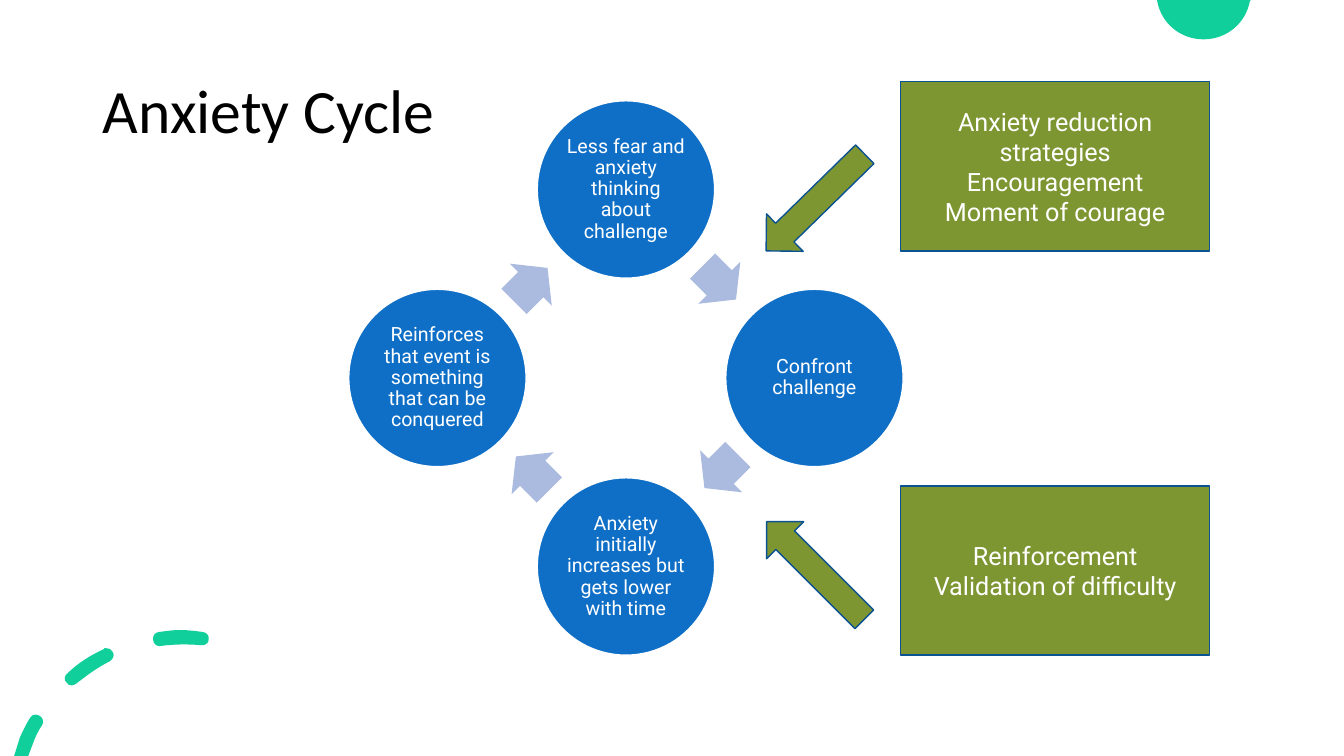
from math import cos, pi, sin

from lxml.etree import SubElement
from pptx import Presentation
from pptx.dml.color import RGBColor
from pptx.enum.shapes import MSO_SHAPE
from pptx.enum.text import MSO_ANCHOR, PP_ALIGN
from pptx.oxml.ns import qn
from pptx.util import Inches, Pt

CELL = Inches(0.1)
COLS, ROWS = 133.33, 75
MINT = RGBColor(0x10, 0xCF, 0x9B)
BLUE = RGBColor(0x0F, 0x6F, 0xC6)
PALE = RGBColor(0xAB, 0xBB, 0xDF)
OLIVE = RGBColor(0x7E, 0x96, 0x32)
NAVY = RGBColor(0x0B, 0x52, 0x92)
WHITE = RGBColor(0xFF, 0xFF, 0xFF)
BLACK = RGBColor(0, 0, 0)

HUB = (62.1, 37.5)
REACH = 18.7
DISC = 17.6
STEPS = [
    "Less fear and anxiety thinking about challenge",
    "Confront challenge",
    "Anxiety initially increases but gets lower with time",
    "Reinforces that event is something that can be conquered",
]
BOXES = [
    (8.1, ["Anxiety reduction strategies", "Encouragement", "Moment of courage"]),
    (48.2, ["Reinforcement", "Validation of difficulty"]),
]
HINTS = [(17.5, 315.6), (54, 45)]
CAP = [[(114.8, 0), (124.1, 0), (124, 0.1),
        (123.6, 2.3, 121.7, 3.9, 119.4, 3.9),
        (117.1, 3.9, 115.2, 2.3, 114.8, 0.1)]]
DASHES = [
    [(3.6, 70.9), (3.4, 70.8, 3.1, 71, 3, 71.2),
     (2.6, 71.8, 2.3, 72.5, 2, 73.1), (1.4, 75), (2.8, 75), (3.3, 73.7),
     (3.5, 73.1, 3.8, 72.5, 4.2, 71.9), (4.4, 71.6, 4.2, 71.1, 3.9, 71),
     (3.8, 70.9, 3.7, 70.9, 3.6, 70.9)],
    [(10.5, 64.3), (10.4, 64.3, 10.3, 64.3, 10.3, 64.4),
     (9, 65, 7.7, 65.8, 6.7, 66.8), (6.4, 67, 6.3, 67.5, 6.6, 67.7),
     (6.7, 67.9, 6.9, 68, 7.1, 68), (7.3, 68, 7.4, 67.9, 7.6, 67.8),
     (8.6, 67, 9.7, 66.2, 10.9, 65.6), (11.2, 65.4, 11.4, 65, 11.2, 64.7),
     (11.1, 64.4, 10.8, 64.3, 10.5, 64.3)],
    [(17.9, 62.5), (17.2, 62.5, 16.5, 62.6, 15.8, 62.7),
     (15.4, 62.7, 15.1, 63.1, 15.2, 63.5), (15.2, 63.8, 15.5, 64.1, 15.8, 64.1),
     (17.3, 63.9, 18.6, 63.9, 19.9, 64), (20.3, 64.1, 20.7, 63.8, 20.7, 63.5),
     (20.8, 63.1, 20.5, 62.7, 20.1, 62.7), (19.4, 62.6, 18.6, 62.5, 17.9, 62.5)],
]


def grid(*cells):
    """Turn grid cells into slide lengths."""
    return [round(cell * CELL) for cell in cells]


def paint(shape, fill, line=None):
    """Set flat fill and outline."""
    shape.shadow.inherit = False
    shape.fill.solid()
    shape.fill.fore_color.rgb = fill
    if line is None:
        shape.line.fill.background()
    else:
        shape.line.color.rgb = line
        shape.line.width = Pt(1)


def bend(shape, legs):
    """Merge the three lines of each six-number leg into a cubic curve."""
    lines = iter(list(shape.element.iter(qn("a:lnTo"))))
    for leg in legs:
        first = next(lines)
        if len(leg) == 6:
            route = first.getparent()
            curve = SubElement(route, qn("a:cubicBezTo"))
            first.addprevious(curve)
            for line in (first, next(lines), next(lines)):
                curve.append(line[0])
                route.remove(line)


def blob(slide, loops):
    """Draw a mint outline made of closed loops."""
    pen = slide.shapes.build_freeform(*grid(*loops[0][0]))
    for i, (start, *legs) in enumerate(loops):
        if i:
            pen.move_to(*grid(*start))
        pen.add_line_segments([grid(*leg[j:j + 2]) for leg in legs
                               for j in range(0, len(leg), 2)])
    shape = pen.convert_to_shape()
    bend(shape, [leg for loop in loops for leg in loop[1:]])
    paint(shape, MINT)


def write(shape, lines, size, font, color, align, space=None):
    """Fill a shape with paragraphs."""
    frame = shape.text_frame
    frame.word_wrap = True
    frame.vertical_anchor = MSO_ANCHOR.MIDDLE
    frame.text = "\n".join(lines)
    for para in frame.paragraphs:
        para.alignment = align
        para.line_spacing = space
        para.font.size = Pt(size)
        para.font.name = font
        para.font.color.rgb = color


def title(slide, text):
    """Add the slide title."""
    box = slide.shapes.add_textbox(*grid(9.2, 4, 115, 14.5))
    write(box, [text], 44, "Calibri", BLACK, PP_ALIGN.LEFT, 0.9)


def disc(group, x, y, text):
    """Add one stage of the cycle, centred on a point."""
    shape = group.shapes.add_shape(
        MSO_SHAPE.OVAL, *grid(x - DISC / 2, y - DISC / 2, DISC, DISC))
    paint(shape, BLUE, WHITE)
    frame = shape.text_frame
    frame.margin_left = frame.margin_right = Inches(0.02)
    frame.margin_top = frame.margin_bottom = Inches(0.02)
    write(shape, [text], 14, "Roboto", WHITE, PP_ALIGN.CENTER, 0.9)


def arrow(owner, kind, x, y, wide, high, turn, fill, line=None):
    """Add a turned block arrow, centred on a point."""
    shape = owner.shapes.add_shape(
        kind, *grid(x - wide / 2, y - high / 2, wide, high))
    shape.rotation = turn
    paint(shape, fill, line)
    return shape


def cycle(slide):
    """Add the ring of stages and the arrows between them."""
    group = slide.shapes.add_group_shape()
    count = len(STEPS)
    turns = [2 * pi * i / count - pi / 2 for i in range(count)]
    spots = [(HUB[0] + REACH * cos(a), HUB[1] + REACH * sin(a)) for a in turns]
    for i, (text, spot) in enumerate(zip(STEPS, spots)):
        disc(group, *spot, text)
        after = spots[(i + 1) % count]
        x, y = ((a + b) / 2 + (a - b) / 200 for a, b in zip(spot, after))
        link = arrow(group, MSO_SHAPE.RIGHT_ARROW, x, y, 4.7, 5.9,
                     45 + 360 / count * i, PALE)
        link.adjustments[0] = 0.6
        link.adjustments[1] = 0.5


def panel(slide, top, lines):
    """Add an olive box of advice."""
    shape = slide.shapes.add_shape(
        MSO_SHAPE.RECTANGLE, *grid(89.36, top, 30.64, 16.8))
    paint(shape, OLIVE, NAVY)
    write(shape, lines, 18, "Roboto", WHITE, PP_ALIGN.CENTER)


def main():
    """Build and save the slide."""
    deck = Presentation()
    deck.slide_width, deck.slide_height = grid(COLS, ROWS)
    slide = deck.slides.add_slide(deck.slide_layouts[6])
    blob(slide, CAP)
    blob(slide, DASHES)
    title(slide, "Anxiety Cycle")
    cycle(slide)
    for (top, lines), (row, turn) in zip(BOXES, HINTS):
        panel(slide, top, lines)
        arrow(slide, MSO_SHAPE.LEFT_ARROW, 80.9, row + 2.6, 13.7, 5.2,
              turn, OLIVE, NAVY)
    deck.save("out.pptx")


if __name__ == "__main__":
    main()
